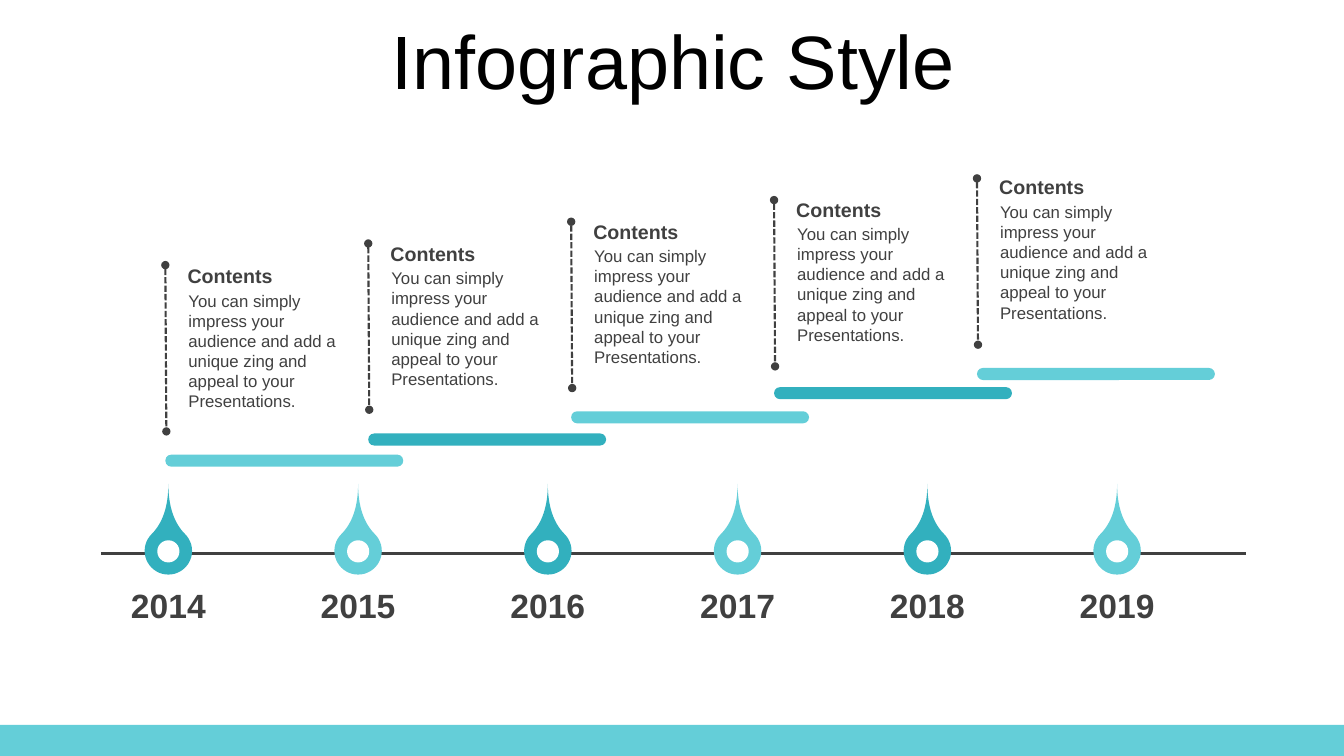
"""Build a timeline slide with rising content notes and drop markers."""
from dataclasses import dataclass, field

from lxml.etree import SubElement
from pptx import Presentation
from pptx.dml.color import RGBColor
from pptx.enum.shapes import MSO_CONNECTOR, MSO_SHAPE
from pptx.enum.text import MSO_ANCHOR, PP_ALIGN
from pptx.oxml.ns import qn
from pptx.util import Inches, Pt

AQUA, TEAL, DARK, WHITE, BLACK = "64CED8", "32B0BE", "404040", "FFFFFF", "000000"
NOTE = ("You can simply impress your audience and add a unique zing "
        "and appeal to your Presentations.")


@dataclass
class Box:
    left: float
    top: float
    width: float
    height: float

    def place(self) -> list:
        return [Inches(n) for n in (self.left, self.top, self.width, self.height)]


@dataclass
class Label:
    text: str
    box: Box
    size: int
    color: str = DARK
    bold: bool = False
    frame: dict = field(default_factory=dict)
    para: dict = field(default_factory=dict)


@dataclass
class Form:
    kind: MSO_SHAPE
    box: Box
    color: str
    turn: float = 0
    adjust: float | None = None


@dataclass
class Line:
    start: tuple[float, float]
    end: tuple[float, float]
    width: float
    dotted: bool = False


def paint(target, color: str) -> None:
    target.rgb = RGBColor.from_string(color)


def apply(target, values: dict) -> None:
    for name, value in values.items():
        setattr(target, name, value)


def draw_label(slide, label: Label) -> None:
    frame = slide.shapes.add_textbox(*label.box.place()).text_frame
    apply(frame, {"word_wrap": True, **label.frame})
    para = frame.paragraphs[0]
    apply(para, label.para)
    run = para.add_run()
    run.text = label.text
    apply(run.font, {"name": "Arial", "size": Pt(label.size), "bold": label.bold})
    paint(run.font.color, label.color)


def draw_form(slide, form: Form) -> None:
    shape = slide.shapes.add_shape(form.kind, *form.box.place())
    shape.shadow.inherit = False
    shape.rotation = form.turn
    if form.adjust is not None:
        shape.adjustments[0] = form.adjust
    shape.fill.solid()
    paint(shape.fill.fore_color, form.color)
    shape.line.fill.background()


def draw_line(slide, line: Line) -> None:
    ends = [Inches(n) for n in (*line.start, *line.end)]
    shape = slide.shapes.add_connector(MSO_CONNECTOR.STRAIGHT, *ends)
    shape.line.width = Pt(line.width)
    paint(shape.line.color, DARK)
    props = shape._element.spPr
    SubElement(props, qn("a:effectLst"))
    if line.dotted:
        stroke = props.find(qn("a:ln"))
        SubElement(stroke, qn("a:prstDash"), val="sysDash")
        for end in ("a:headEnd", "a:tailEnd"):
            SubElement(stroke, qn(end), type="oval")


def draw_year(slide, step: int) -> None:
    mid = 1.67 + 9.41 * step / 5
    color = AQUA if step % 2 else TEAL
    draw_form(slide, Form(MSO_SHAPE.TEAR, Box(mid - 0.235, 5.23, 0.47, 0.47),
                          color, 315, 2))
    flat = dict.fromkeys(
        ("margin_left", "margin_top", "margin_right", "margin_bottom"), 0)
    draw_label(slide, Label(str(2014 + step), Box(mid - 0.6, 5.8, 1.2, 0.4), 24,
                            bold=True, frame=flat,
                            para={"alignment": PP_ALIGN.CENTER}))
    draw_form(slide, Form(MSO_SHAPE.OVAL, Box(mid - 0.11, 5.36, 0.22, 0.22), WHITE))


def draw_note(slide, step: int, bar: float) -> None:
    left = 1.64 + 8.05 * step / 4
    rise = 0.22 * step
    draw_form(slide, Form(MSO_SHAPE.ROUNDED_RECTANGLE, Box(left, bar, 2.36, 0.12),
                          TEAL if step % 2 else AQUA, adjust=0.5))
    draw_label(slide, Label(NOTE, Box(left + 0.13, 2.83 - rise, 1.72, 1.31), 12))
    pads = {"margin_left": Inches(0.12), "margin_right": Inches(0.12)}
    draw_label(slide, Label("Contents", Box(left + 0.1, 2.57 - rise, 1.73, 0.34),
                            14, bold=True, frame=pads))
    top = 2.63 - 0.86 * step / 4
    draw_line(slide, Line((left, top), (left + 0.01, top + 1.65), 1.5, True))


def main() -> None:
    deck = Presentation()
    apply(deck, {"slide_width": Inches(13.33), "slide_height": Inches(7.5)})
    slide = deck.slides.add_slide(deck.slide_layouts[6])
    draw_form(slide, Form(MSO_SHAPE.RECTANGLE, Box(0, 7.19, 13.33, 0.31), AQUA))
    draw_label(slide, Label("Infographic Style", Box(0.35, 0.25, 12.66, 0.79), 54,
                            BLACK, frame={"vertical_anchor": MSO_ANCHOR.MIDDLE},
                            para={"alignment": PP_ALIGN.CENTER,
                                  "line_spacing": 0.9, "space_before": Pt(10)}))
    draw_line(slide, Line((1, 5.49), (12.36, 5.49), 1.75))
    for step in range(6):
        draw_year(slide, step)
    for step, bar in enumerate((4.51, 4.3, 4.08, 3.84, 3.65)):
        draw_note(slide, step, bar)
    deck.save("out.pptx")


if __name__ == "__main__":
    main()
